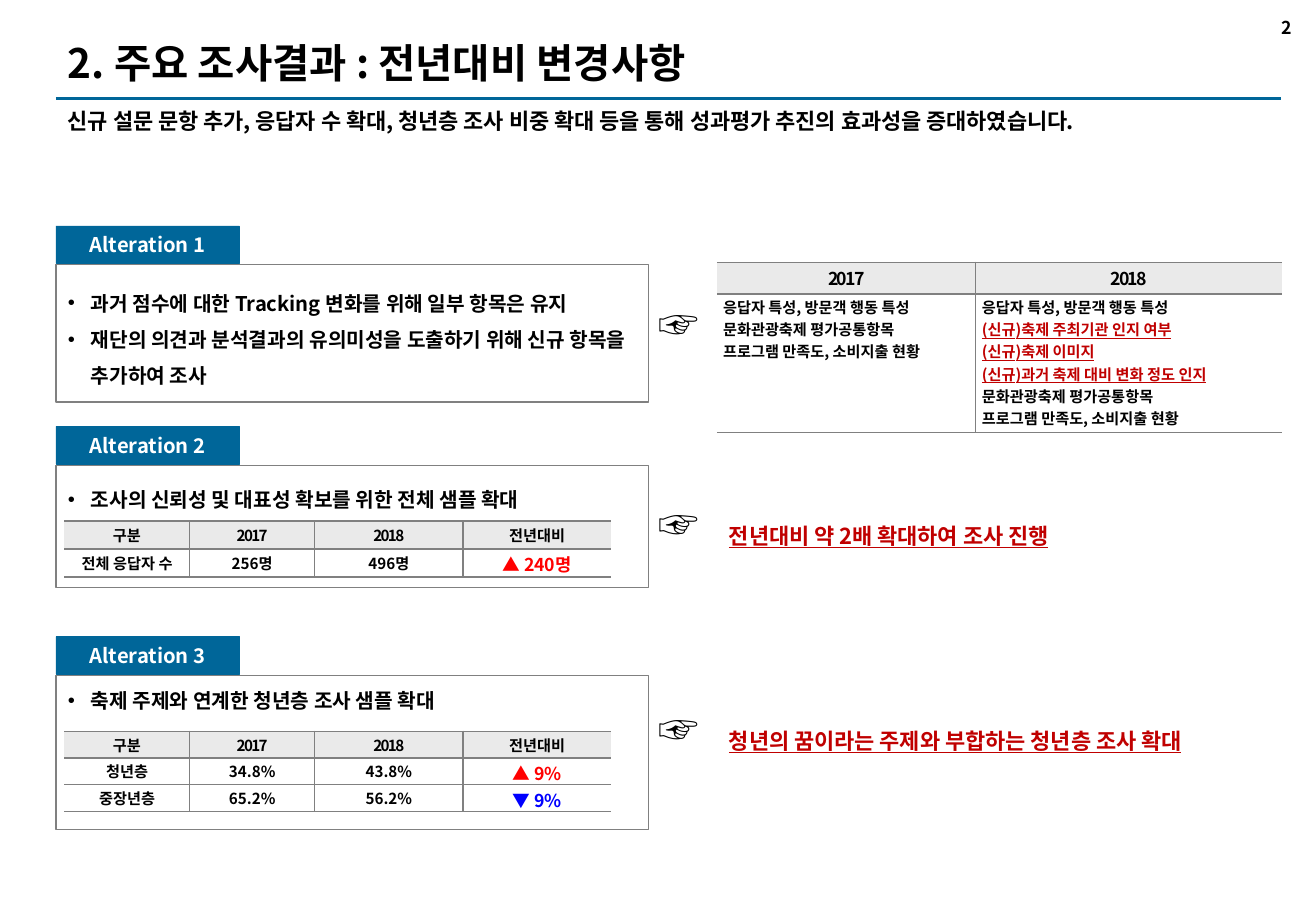
"""Builds the survey-results slide on year-on-year changes."""
from dataclasses import dataclass

from lxml.etree import SubElement
from pptx import Presentation
from pptx.dml.color import RGBColor
from pptx.enum.shapes import MSO_CONNECTOR, MSO_SHAPE
from pptx.enum.text import MSO_ANCHOR, PP_ALIGN
from pptx.oxml.ns import qn
from pptx.util import Emu, Inches, Pt

COLUMN = ROW = Inches(0.1)
FONT = "Noto Sans CJK KR"
BLACK = RGBColor(0x00, 0x00, 0x00)
WHITE = RGBColor(0xFF, 0xFF, 0xFF)
TEAL = RGBColor(0x00, 0x66, 0x99)
GREY = RGBColor(0x80, 0x80, 0x80)
PALE = RGBColor(0xEA, 0xEA, 0xEA)
CRIMSON = RGBColor(0xC0, 0x00, 0x00)
RED = RGBColor(0xFF, 0x00, 0x00)
BLUE = RGBColor(0x00, 0x00, 0xFF)
PANEL_LEFT, PANEL_WIDTH = 4.6, 48.8
TAB_WIDTH, TAB_HEIGHT, TAB_RISE = 15.1, 3.1, 3.2
HAND_LEFT, NOTE_LEFT = 53.2, 59
SAMPLE_LEFT, SAMPLE_WIDTHS = 5.3, (10.3, 10.3, 12.2, 12.2)


@dataclass
class Box:
    left: float
    top: float
    width: float
    height: float

    def place(self) -> tuple:
        return (Emu(round(self.left * COLUMN)), Emu(round(self.top * ROW)),
                Emu(round(self.width * COLUMN)), Emu(round(self.height * ROW)))


@dataclass
class Span:
    text: str
    size: float = 9
    color: RGBColor = BLACK
    underline: bool = False
    spacing: int = 0


@dataclass
class Alteration:
    name: str
    top: float
    height: float
    hand_top: float
    points: list
    line_spacing: float = 1.0
    text_top: float | None = None


@dataclass
class Grid:
    left: float
    top: float
    widths: tuple
    heights: tuple
    rows: list


def year(text: str, size: float = 9) -> Span:
    return Span(text, size, spacing=-100)


SAMPLE_HEAD = [[Span("구분")], [year("2017")], [year("2018")], [Span("전년대비")]]

ALTERATIONS = [
    Alteration("Alteration 1", 21.8, 11.3, 24.1,
               ["과거 점수에 대한 Tracking 변화를 위해 일부 항목은 유지",
                "재단의 의견과 분석결과의 유의미성을 도출하기 위해 신규 항목을 추가하여 조사"], 1.5),
    Alteration("Alteration 2", 38.3, 10.1, 40.6,
               ["조사의 신뢰성 및 대표성 확보를 위한 전체 샘플 확대"], text_top=1.8),
    Alteration("Alteration 3", 55.6, 12.7, 57.5,
               ["축제 주제와 연계한 청년층 조사 샘플 확대"], text_top=1.1),
]

GRIDS = [
    Grid(NOTE_LEFT, 21.6, (21.3, 25.2), (2.6, 11.4), [
        [[year("2017", 10.5)], [year("2018", 10.5)]],
        [[Span("응답자 특성, 방문객 행동 특성"), Span("문화관광축제 평가공통항목"),
          Span("프로그램 만족도, 소비지출 현황")],
         [Span("응답자 특성, 방문객 행동 특성"),
          Span("(신규)축제 주최기관 인지 여부", color=CRIMSON, underline=True),
          Span("(신규)축제 이미지", color=CRIMSON, underline=True),
          Span("(신규)과거 축제 대비 변화 정도 인지", color=CRIMSON, underline=True),
          Span("문화관광축제 평가공통항목"), Span("프로그램 만족도, 소비지출 현황")]]]),
    Grid(SAMPLE_LEFT, 42.9, SAMPLE_WIDTHS, (2.3, 2.3), [
        SAMPLE_HEAD,
        [[Span("전체 응답자 수")], [Span("256명")], [Span("496명")], [Span("▲ 240명", 10.5, RED)]]]),
    Grid(SAMPLE_LEFT, 60.2, SAMPLE_WIDTHS, (2.2, 2.2, 2.2), [
        SAMPLE_HEAD,
        [[Span("청년층")], [Span("34.8%")], [Span("43.8%")], [Span("▲ 9%", 10.5, RED)]],
        [[Span("중장년층")], [Span("65.2%")], [Span("56.2%")], [Span("▼ 9%", 10.5, BLUE)]]]),
]


def write(frame, spans: list, align=PP_ALIGN.LEFT, line_spacing: float = 1.0) -> None:
    frame.text = "\n".join(span.text for span in spans)
    for para, span in zip(frame.paragraphs, spans):
        para.alignment = align
        para.line_spacing = line_spacing
        run = para.runs[0]
        run.font.size = Pt(span.size)
        run.font.bold = True
        run.font.underline = span.underline
        run.font.color.rgb = span.color
        run.font.name = FONT
        properties = run.font._element
        SubElement(properties, qn("a:ea"), typeface=FONT)
        if span.spacing:
            properties.set("spc", str(span.spacing))


def add_text(page, box: Box, span: Span, align=PP_ALIGN.LEFT):
    frame = page.shapes.add_textbox(*box.place()).text_frame
    frame.word_wrap = True
    write(frame, [span], align)
    return frame


def add_rectangle(page, box: Box, line: RGBColor, width: float, fill: RGBColor | None = None):
    shape = page.shapes.add_shape(MSO_SHAPE.RECTANGLE, *box.place())
    shape.shadow.inherit = False
    if fill is None:
        shape.fill.background()
    else:
        shape.fill.solid()
        shape.fill.fore_color.rgb = fill
    shape.line.color.rgb = line
    shape.line.width = Pt(width)
    shape.text_frame.vertical_anchor = MSO_ANCHOR.MIDDLE
    return shape.text_frame


def add_alteration(page, item: Alteration) -> None:
    panel = Box(PANEL_LEFT, item.top, PANEL_WIDTH, item.height)
    frame = add_rectangle(page, panel, GREY, 0.75)
    write(frame, [Span(point, 12) for point in item.points], line_spacing=item.line_spacing)
    if item.text_top is not None:
        frame.vertical_anchor = MSO_ANCHOR.TOP
        frame.margin_top = Emu(round(item.text_top * ROW))
    for para in frame.paragraphs:
        properties = para._p.get_or_add_pPr()
        properties.set("marL", str(Inches(0.19)))
        properties.set("indent", str(-Inches(0.19)))
        SubElement(properties, qn("a:buFont"), typeface="Arial")
        SubElement(properties, qn("a:buChar"), char="•")
    tab = Box(PANEL_LEFT, item.top - TAB_RISE, TAB_WIDTH, TAB_HEIGHT)
    write(add_rectangle(page, tab, TEAL, 0.25, TEAL), [Span(item.name, 12, WHITE)], PP_ALIGN.CENTER)
    add_text(page, Box(HAND_LEFT, item.hand_top, 6, 5), Span("☞", 24))


def set_borders(cell, first: bool, last: bool) -> None:
    properties = cell._tc.get_or_add_tcPr()
    sides = {"lnL": not first, "lnR": not last, "lnT": True, "lnB": True}
    for position, (side, visible) in enumerate(sides.items()):
        border = SubElement(properties, qn(f"a:{side}"), w=str(Pt(1)))
        if visible:
            solid = SubElement(border, qn("a:solidFill"))
            SubElement(solid, qn("a:srgbClr"), val=str(GREY))
        else:
            SubElement(border, qn("a:noFill"))
        properties.insert(position, border)


def add_grid(page, grid: Grid) -> None:
    box = Box(grid.left, grid.top, sum(grid.widths), sum(grid.heights))
    table = page.shapes.add_table(len(grid.heights), len(grid.widths), *box.place()).table
    table.first_row = table.horz_banding = False
    for column, width in zip(table.columns, grid.widths):
        column.width = Emu(round(width * COLUMN))
    for row_index, (row, height) in enumerate(zip(grid.rows, grid.heights)):
        table.rows[row_index].height = Emu(round(height * ROW))
        for column_index, spans in enumerate(row):
            cell = table.cell(row_index, column_index)
            listed = row_index > 0 and len(spans) > 1
            cell.margin_left = cell.margin_right = Inches(0.05)
            cell.margin_top = cell.margin_bottom = Inches(0.02)
            cell.vertical_anchor = MSO_ANCHOR.TOP if listed else MSO_ANCHOR.MIDDLE
            write(cell.text_frame, spans, PP_ALIGN.LEFT if listed else PP_ALIGN.CENTER)
            if row_index == 0:
                cell.fill.solid()
                cell.fill.fore_color.rgb = PALE
            else:
                cell.fill.background()
            set_borders(cell, column_index == 0, column_index == len(row) - 1)


def add_heading(page) -> None:
    left, top, width, _ = Box(4.6, 8.1, 100.8, 0).place()
    rule = page.shapes.add_connector(MSO_CONNECTOR.STRAIGHT, left, top, left + width, top)
    rule.line.color.rgb = TEAL
    rule.line.width = Pt(1.75)
    SubElement(rule._element.spPr, qn("a:effectLst"))
    add_text(page, Box(103.9, 0.9, 3.9, 2.8), Span("2", 10.5), PP_ALIGN.CENTER)
    title = add_text(page, Box(4.6, 1.1, 63, 7.6), Span("2. 주요 조사결과 : 전년대비 변경사항", 24))
    title.vertical_anchor = MSO_ANCHOR.MIDDLE
    title.paragraphs[0].line_spacing = 1.1
    add_text(page, Box(4.6, 8.4, 100.7, 8.8), Span(
        "신규 설문 문항 추가, 응답자 수 확대, 청년층 조사 비중 확대 등을 통해 성과평가 추진의 효과성을 증대하였습니다.", 13))


def main() -> None:
    deck = Presentation()
    deck.slide_width, deck.slide_height = Inches(10.83), Inches(7.5)
    page = deck.slides.add_slide(deck.slide_layouts[6])
    add_heading(page)
    for item in ALTERATIONS:
        add_alteration(page, item)
    for grid in GRIDS:
        add_grid(page, grid)
    for top, text in ((42.5, "전년대비 약 2배 확대하여 조사 진행"),
                      (59.4, "청년의 꿈이라는 주제와 부합하는 청년층 조사 확대")):
        add_text(page, Box(NOTE_LEFT, top, 44.8, 3.2), Span(text, 13, CRIMSON, True))
    deck.save("out.pptx")


if __name__ == "__main__":
    main()
